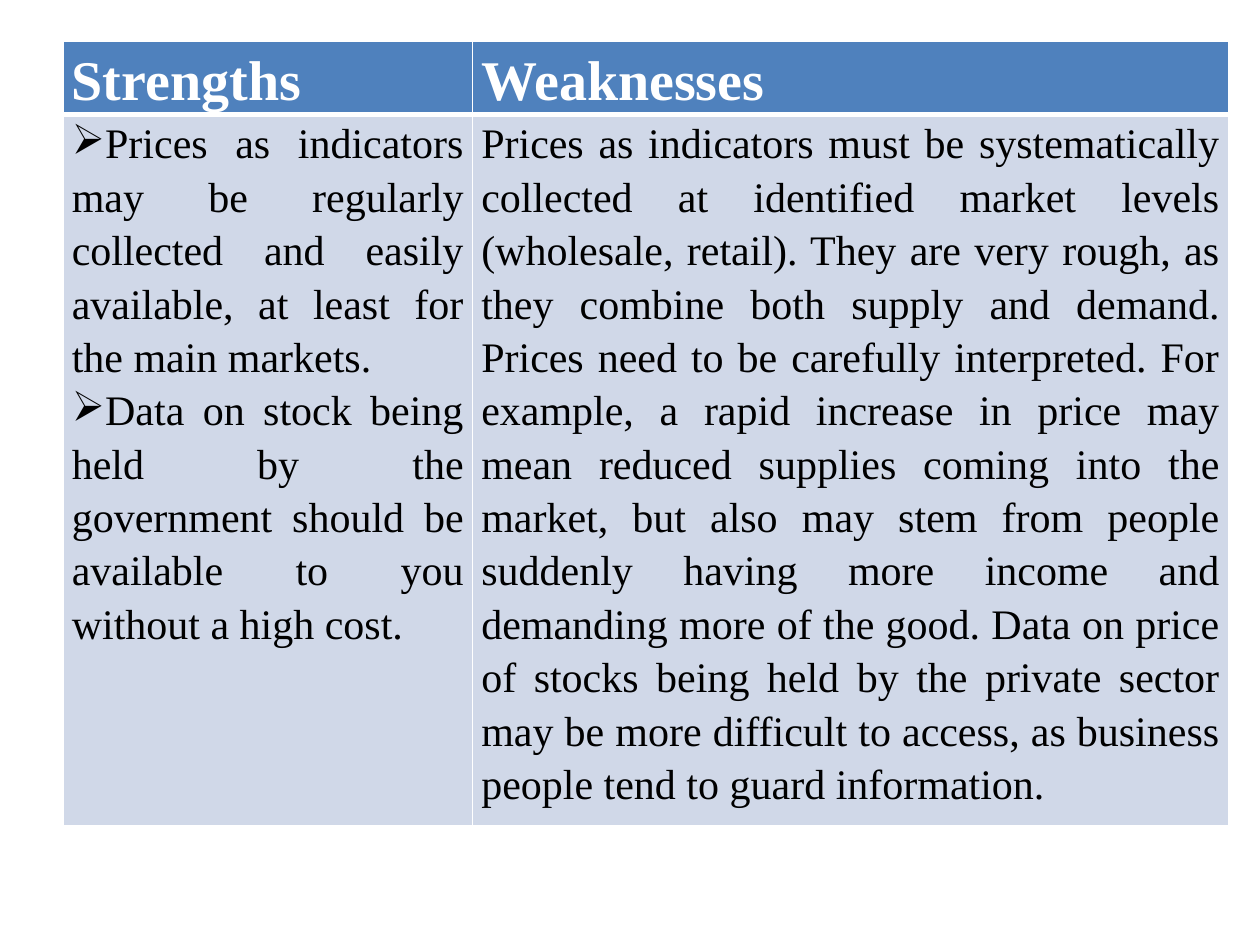
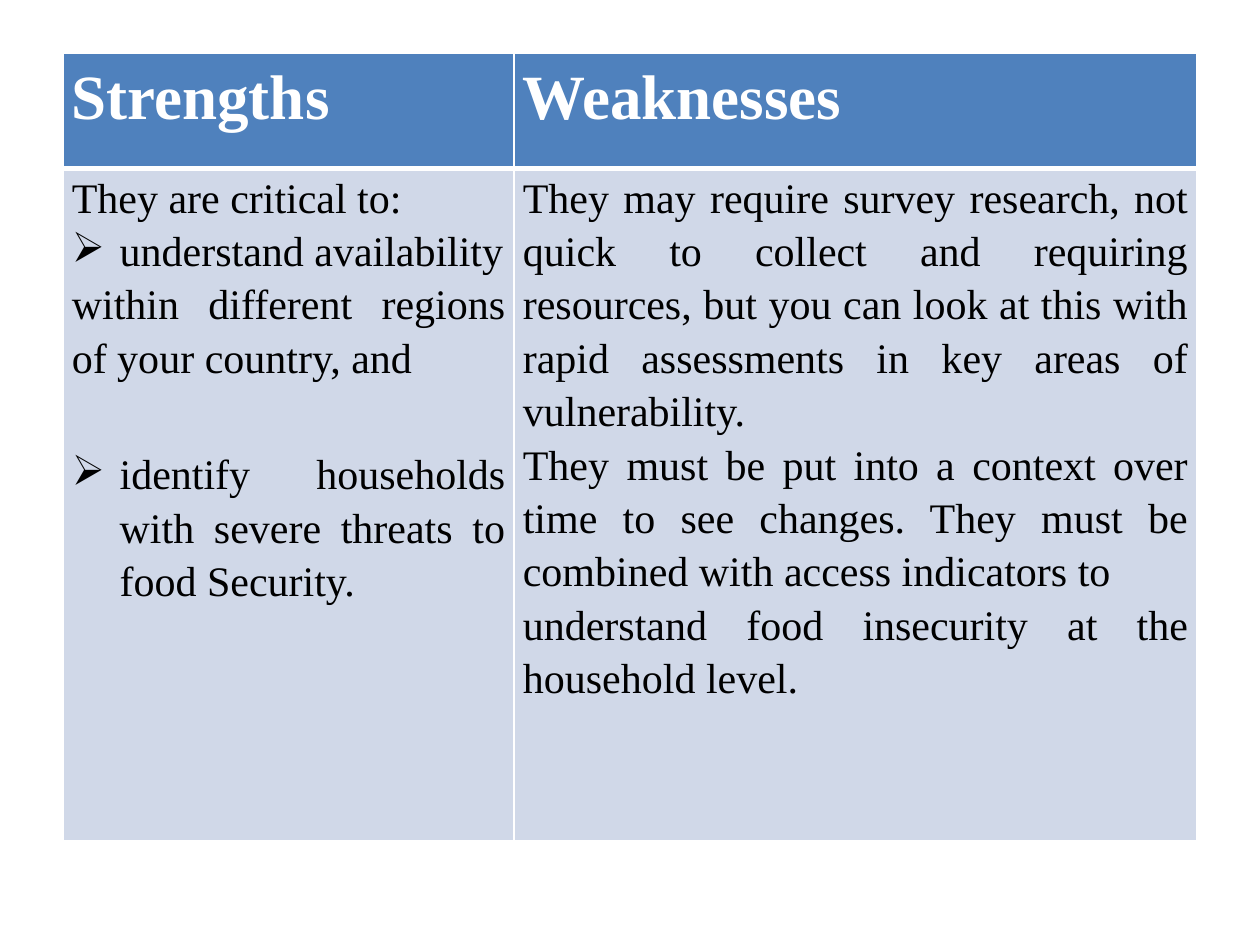
from dataclasses import dataclass

from lxml.etree import SubElement as Sub
from pptx import Presentation as Deck
from pptx.dml.color import RGBColor as Color
from pptx.enum.text import PP_ALIGN as Align
from pptx.oxml import parse_xml as to_xml
from pptx.oxml.ns import nsdecls, qn
from pptx.util import Inches, Pt


@dataclass(frozen=True)
class Theme:
    """Colours, type and spacing shared by the slides."""
    font: str = "Times New Roman"
    head: Color = Color(0x4F, 0x81, 0xBD)
    body: Color = Color(0xD0, 0xD8, 0xE8)
    white: Color = Color(0xFF, 0xFF, 0xFF)
    black: Color = Color(0, 0, 0)
    size: int = 24
    space: float = 1.15
    thin: int = 1
    thick: int = 3
    inset: float = 0.07


@dataclass(frozen=True)
class Point:
    """A bulleted paragraph with its hanging indent and gap above."""
    text: str
    hang: float = 0
    gap: int = 0


LOOK = Theme()
HEADS = ("Strengths", "Weaknesses")

PRICE_PROS = (
    Point("Prices as indicators may be regularly collected and easily "
          "available, at least for the main markets."),
    Point("Data on stock being held by the government should be available "
          "to you without a high cost."),
)
PRICE_CONS = (
    "Prices as indicators must be systematically collected at identified "
    "market levels (wholesale, retail). They are very rough, as they combine "
    "both supply and demand. Prices need to be carefully interpreted. For "
    "example, a rapid increase in price may mean reduced supplies coming into "
    "the market, but also may stem from people suddenly having more income and "
    "demanding more of the good. Data on price of stocks being held by the "
    "private sector may be more difficult to access, as business people tend "
    "to guard information.",
)
FOOD_PROS = (
    "They are critical to:",
    Point("understand availability", hang=0.38),
    "within different regions of your country, and",
    Point("identify households with severe threats to food Security.",
          hang=0.38, gap=36),
)
FOOD_CONS = (
    "They may require survey research, not quick to collect and requiring "
    "resources, but you can look at this with rapid assessments in key areas "
    "of vulnerability.",
    "They must be put into a context over time to see changes. They must be "
    "combined with access indicators to",
    "understand food insecurity at the household level.",
)


def add_mark(para, hang):
    """Give a paragraph an arrow bullet and a hanging indent."""
    props = para._p.get_or_add_pPr()
    props.set("marL", str(Inches(hang)))
    props.set("indent", str(-Inches(hang)))
    Sub(props, qn("a:buChar")).set("char", "➢")


def add_edges(cell, top, base):
    """Draw white borders round a cell."""
    props = cell._tc.get_or_add_tcPr()
    edges = {"L": LOOK.thin, "R": LOOK.thin, "T": top, "B": base}
    for place, (side, width) in enumerate(edges.items()):
        props.insert(place, to_xml(
            f'<a:ln{side} {nsdecls("a")} w="{Pt(width)}"><a:solidFill>'
            f'<a:srgbClr val="{LOOK.white}"/></a:solidFill></a:ln{side}>'))


def set_para(para, item, size, color, bold):
    """Write one justified paragraph, with a bullet for a Point."""
    mark = isinstance(item, Point)
    para.text = item.text if mark else item
    para.alignment = Align.JUSTIFY
    para.line_spacing = LOOK.space
    if mark:
        if item.gap:
            para.space_before = Pt(item.gap)
        add_mark(para, item.hang)
    for run in para.runs:
        font = run.font
        font.name, font.size, font.bold = LOOK.font, Pt(size), bold
        font.color.rgb = color


def set_cell(cell, items, fill, size, color, bold=False):
    """Fill a cell and write its paragraphs."""
    cell.margin_left = cell.margin_right = Inches(LOOK.inset)
    cell.margin_top = cell.margin_bottom = 0
    cell.fill.solid()
    cell.fill.fore_color.rgb = fill
    frame = cell.text_frame
    for index, item in enumerate(items):
        para = frame.add_paragraph() if index else frame.paragraphs[0]
        set_para(para, item, size, color, bold)


def add_slide(deck, top, cols, rows, size, texts):
    """Add a slide with a table of strengths and weaknesses."""
    slide = deck.slides.add_slide(deck.slide_layouts[6])
    table = slide.shapes.add_table(
        2, 2, Inches(0.5), Inches(top),
        Inches(sum(cols)), Inches(sum(rows))).table
    for row, height in zip(table.rows, rows):
        row.height = Inches(height)
    for index, width in enumerate(cols):
        table.columns[index].width = Inches(width)
        head, body = table.cell(0, index), table.cell(1, index)
        set_cell(head, [HEADS[index]], LOOK.head, size, LOOK.white, True)
        set_cell(body, texts[index], LOOK.body, LOOK.size, LOOK.black)
        add_edges(head, LOOK.thin, LOOK.thick)
        add_edges(body, LOOK.thick, LOOK.thin)


def main():
    """Build and save the deck."""
    deck = Deck()
    deck.slide_width, deck.slide_height = Inches(10), Inches(7.5)
    add_slide(deck, 0.33, (3.25, 6), (0.58, 5.64), 32,
              (PRICE_PROS, PRICE_CONS))
    add_slide(deck, 0.42, (3.58, 5.42), (0.92, 5.33), 36,
              (FOOD_PROS, FOOD_CONS))
    deck.save("out.pptx")


if __name__ == "__main__":
    main()
